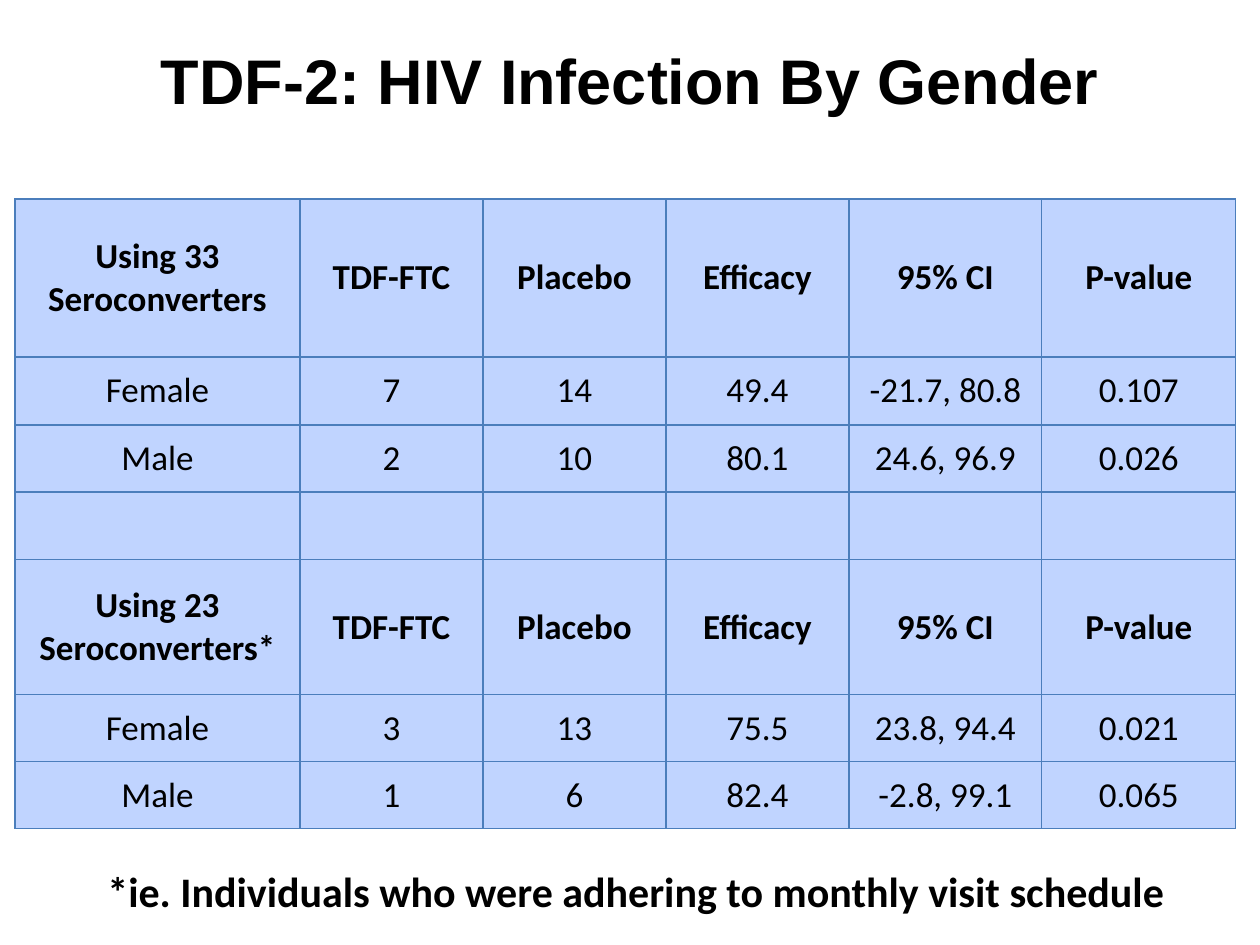
"""Build the TDF-2 slide comparing HIV infection by gender."""
from dataclasses import dataclass

from lxml.etree import SubElement
from pptx import Presentation
from pptx.dml.color import RGBColor
from pptx.enum.text import MSO_ANCHOR as Anchor, MSO_AUTO_SIZE as AutoSize, PP_ALIGN as Align
from pptx.oxml.ns import qn
from pptx.util import Emu, Pt

EMU_PER_PX = 914400 / 126


@dataclass(frozen=True)
class Theme:
    text: str = "000000"
    cell: str = "C0D4FF"
    border: str = "4B7EBC"
    title_font: str = "Arial"
    body_font: str = "Calibri"
    title_size: int = 36
    table_size: int = 20
    note_size: int = 24
    border_width: float = 0.75


@dataclass(frozen=True)
class Box:
    left: int
    top: int
    width: int
    height: int


@dataclass(frozen=True)
class Row:
    height: int
    values: tuple[str, ...]
    header: bool = False


THEME = Theme()
TITLE_BOX = Box(63, 0, 1134, 158)
TABLE_BOX = Box(15, 199, 1221, 630)
NOTE_BOX = Box(95, 859, 1092, 63)
COLUMN_WIDTHS = (285, 183, 183, 183, 193, 194)
MEASURES = ("TDF-FTC", "Placebo", "Efficacy", "95% CI", "P-value")
ROWS = (
    Row(158, ("Using 33 Seroconverters", *MEASURES), header=True),
    Row(68, ("Female", "7", "14", "49.4", "-21.7, 80.8", "0.107")),
    Row(67, ("Male", "2", "10", "80.1", "24.6, 96.9", "0.026")),
    Row(68, ("",) * len(COLUMN_WIDTHS)),
    Row(135, ("Using 23 Seroconverters*", *MEASURES), header=True),
    Row(67, ("Female", "3", "13", "75.5", "23.8, 94.4", "0.021")),
    Row(67, ("Male", "1", "6", "82.4", "-2.8, 99.1", "0.065")),
)


def px(value: int) -> Emu:
    return Emu(round(value * EMU_PER_PX))


def place(box: Box) -> tuple[Emu, ...]:
    return px(box.left), px(box.top), px(box.width), px(box.height)


def write(text_frame, text: str, font_name: str, size: int, bold: bool, align: Align) -> None:
    text_frame.text = text
    paragraph = text_frame.paragraphs[0]
    paragraph.alignment = align
    for run in paragraph.runs:
        run.font.name = font_name
        run.font.size = Pt(size)
        run.font.bold = bold
        run.font.color.rgb = RGBColor.from_string(THEME.text)


def add_borders(cell) -> None:
    properties = cell._tc.get_or_add_tcPr()
    for side in ("lnL", "lnR", "lnT", "lnB"):
        line = SubElement(properties, qn(f"a:{side}"), w=str(Pt(THEME.border_width)))
        fill = SubElement(line, qn("a:solidFill"))
        SubElement(fill, qn("a:srgbClr"), val=THEME.border)


def draw_title(slide, text: str) -> None:
    title = slide.shapes.title
    title.left, title.top, title.width, title.height = place(TITLE_BOX)
    title.text_frame.vertical_anchor = Anchor.MIDDLE
    write(title.text_frame, text, THEME.title_font, THEME.title_size, True, Align.CENTER)


def draw_cell(cell, text: str, header: bool) -> None:
    add_borders(cell)
    cell.fill.solid()
    cell.fill.fore_color.rgb = RGBColor.from_string(THEME.cell)
    cell.vertical_anchor = Anchor.MIDDLE
    cell.margin_left = cell.margin_right = px(13 if header else 9)
    cell.margin_top = cell.margin_bottom = px(6 if header else 0)
    write(cell.text_frame, text, THEME.body_font, THEME.table_size, header, Align.CENTER)


def draw_table(slide) -> None:
    frame = slide.shapes.add_table(len(ROWS), len(COLUMN_WIDTHS), *place(TABLE_BOX))
    table = frame.table
    table.horz_banding = False
    for column, width in zip(table.columns, COLUMN_WIDTHS):
        column.width = px(width)
    for table_row, row in zip(table.rows, ROWS):
        table_row.height = px(row.height)
        for cell, value in zip(table_row.cells, row.values):
            draw_cell(cell, value, row.header)


def draw_note(slide, text: str) -> None:
    text_frame = slide.shapes.add_textbox(*place(NOTE_BOX)).text_frame
    text_frame.word_wrap = False
    text_frame.auto_size = AutoSize.SHAPE_TO_FIT_TEXT
    write(text_frame, text, THEME.body_font, THEME.note_size, True, Align.LEFT)


def main() -> None:
    presentation = Presentation()
    presentation.slide_width, presentation.slide_height = px(1260), px(945)
    slide = presentation.slides.add_slide(presentation.slide_layouts.get_by_name("Title Only"))
    draw_title(slide, "TDF-2: HIV Infection By Gender")
    draw_table(slide)
    draw_note(slide, "*ie. Individuals who were adhering to monthly visit schedule")
    presentation.save("out.pptx")


if __name__ == "__main__":
    main()
